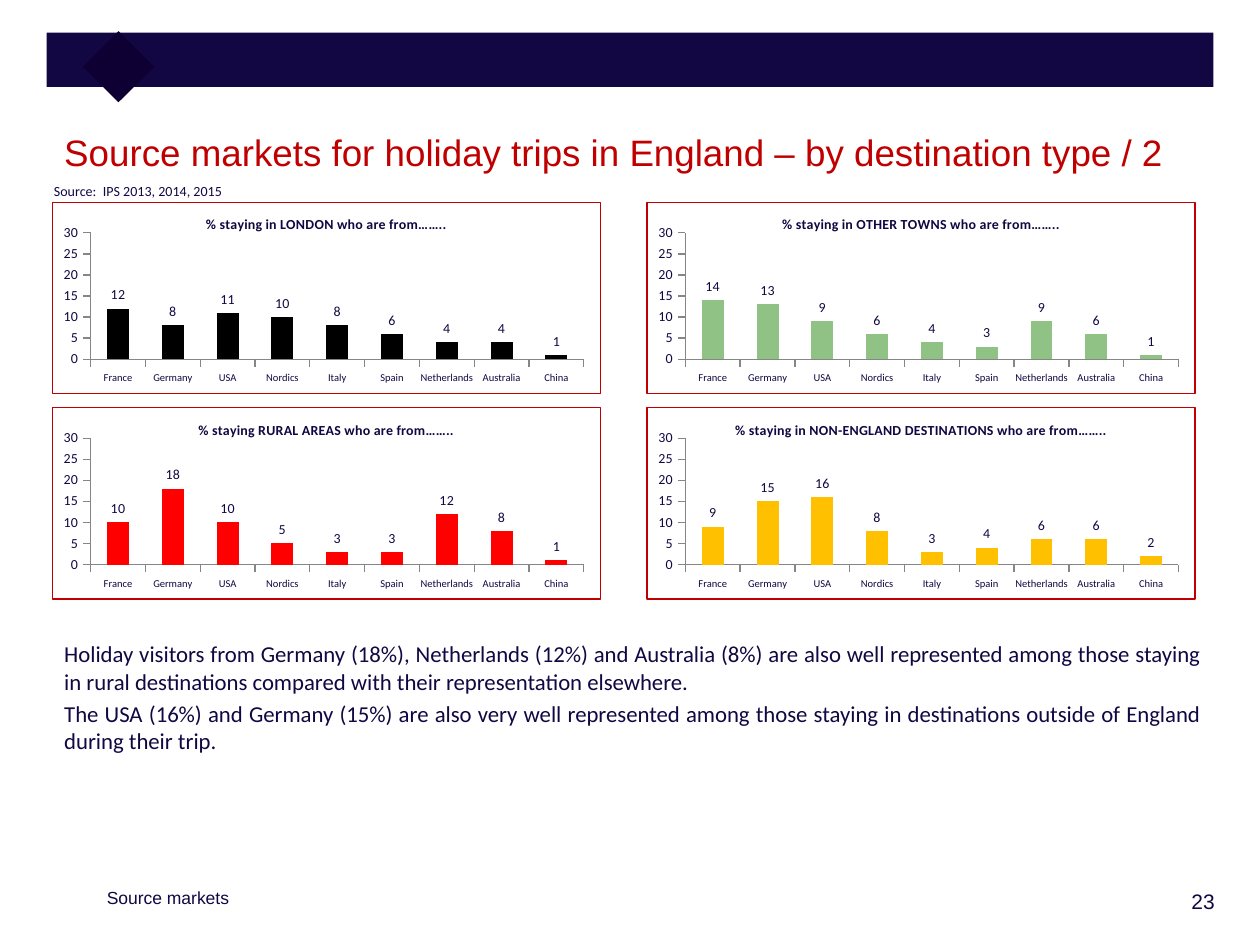
from lxml import etree
from pptx import Presentation
from pptx.chart.data import CategoryChartData
from pptx.dml.color import RGBColor
from pptx.enum import chart as charts, shapes, text
from pptx.util import Inches, Pt

NAVY, DARK_NAVY, RED, GREY = "120742", "0E0033", "C00000", "868686"

TITLE = "Source markets for holiday trips in England – by destination type / 2"
SOURCE = "Source:  IPS 2013, 2014, 2015"
SECTION = "Source markets"
PAGE = "23"
COMMENTS = [
    "Holiday visitors from Germany (18%), Netherlands (12%) and Australia (8%) are also well "
    "represented among those staying in rural destinations compared with their representation "
    "elsewhere.",
    "The USA (16%) and Germany (15%) are also very well represented among those staying in "
    "destinations outside of England during their trip.",
]
MARKETS = ["France", "Germany", "USA", "Nordics", "Italy", "Spain",
           "Netherlands", "Australia", "China"]
DESTINATIONS = [
    ("% staying in LONDON who are from……..", "000000", [12, 8, 11, 10, 8, 6, 4, 4, 1]),
    ("% staying in OTHER TOWNS who are from……..", "90C286", [14, 13, 9, 6, 4, 3, 9, 6, 1]),
    ("% staying RURAL AREAS who are from……..", "FF0000", [10, 18, 10, 5, 3, 3, 12, 8, 1]),
    ("% staying in NON-ENGLAND DESTINATIONS who are from……..", "FFC000",
     [9, 15, 16, 8, 3, 4, 6, 6, 2]),
]

CHART_LEFT, CHART_TOP, CHART_WIDTH, CHART_HEIGHT = 0.41, 1.6, 4.36, 1.53
COLUMN_STEP, ROW_STEP = 4.72, 1.63
PLOT = {"x": 0.07, "y": 0.16, "w": 0.9, "h": 0.66}
CHART_NS = "http://schemas.openxmlformats.org/drawingml/2006/chart"
DRAWING_NS = "http://schemas.openxmlformats.org/drawingml/2006/main"


def rgb(value):
    return RGBColor.from_string(value)


def style(font, size, face="Calibri", color=NAVY, bold=False):
    font.size, font.name, font.bold = Pt(size), face, bold
    font.color.rgb = rgb(color)


def place(shape, box):
    shape.left, shape.top, shape.width, shape.height = map(Inches, box)


def add_label(slide, words, box, size, face, align=text.PP_ALIGN.LEFT):
    frame = slide.shapes.add_textbox(*map(Inches, box)).text_frame
    frame.word_wrap = True
    frame.text = words
    frame.paragraphs[0].alignment = align
    style(frame.paragraphs[0].font, size, face)


def add_block(slide, box, color, rotation=0):
    block = slide.shapes.add_shape(shapes.MSO_SHAPE.RECTANGLE, *map(Inches, box))
    block.shadow.inherit = False
    block.fill.solid()
    block.fill.fore_color.rgb = rgb(color)
    block.line.fill.background()
    block.rotation = rotation


def frame_chart(chart):
    """Give the chart area a thin red border and fix its inner plot area."""
    border = etree.fromstring(
        f'<c:spPr xmlns:c="{CHART_NS}" xmlns:a="{DRAWING_NS}"><a:noFill/>'
        f'<a:ln w="{Pt(0.75)}"><a:solidFill><a:srgbClr val="{RED}"/></a:solidFill></a:ln>'
        '</c:spPr>')
    chart.font._element.getroottree().getroot().find(f"{{{CHART_NS}}}txPr").addprevious(border)
    plot_area = border.getparent().find(f".//{{{CHART_NS}}}plotArea")
    for old in plot_area.findall(f"{{{CHART_NS}}}layout"):
        plot_area.remove(old)
    edges = "".join(f'<c:{side}Mode val="edge"/>' for side in "xy")
    sizes = "".join(f'<c:{side} val="{part}"/>' for side, part in PLOT.items())
    plot_area.insert(0, etree.fromstring(
        f'<c:layout xmlns:c="{CHART_NS}"><c:manualLayout><c:layoutTarget val="inner"/>'
        f'{edges}{sizes}</c:manualLayout></c:layout>'))


def add_market_chart(slide, box, heading, color, shares):
    data = CategoryChartData(number_format="0")
    data.categories = MARKETS
    data.add_series("Series 1", shares)
    chart = slide.shapes.add_chart(
        charts.XL_CHART_TYPE.COLUMN_CLUSTERED, *map(Inches, box), data).chart
    style(chart.font, 12)
    chart.has_legend = False
    chart.has_title = True
    chart.chart_title.text_frame.text = heading
    style(chart.chart_title.text_frame.paragraphs[0].font, 8, bold=True)
    chart.chart_title.include_in_layout = False

    for axis, size in ((chart.category_axis, 6), (chart.value_axis, 8)):
        style(axis.tick_labels.font, size)
        axis.has_major_gridlines = False
        axis.major_tick_mark = charts.XL_TICK_MARK.OUTSIDE
        axis.format.line.color.rgb = rgb(GREY)
    scale = chart.value_axis
    scale.minimum_scale, scale.maximum_scale, scale.major_unit = 0, 30, 5

    plot = chart.plots[0]
    plot.gap_width = 150
    plot.vary_by_categories = False
    bars = plot.series[0]
    bars.format.fill.solid()
    bars.format.fill.fore_color.rgb = rgb(color)
    labels = bars.data_labels
    labels.show_value = True
    labels.number_format, labels.number_format_is_linked = "0", False
    labels.position = charts.XL_LABEL_POSITION.OUTSIDE_END
    style(labels.font, 8)
    frame_chart(chart)


def main():
    deck = Presentation()
    deck.slide_width, deck.slide_height = Inches(10), Inches(7.5)
    slide = deck.slides.add_slide(deck.slide_layouts[1])
    title, body = slide.placeholders

    add_block(slide, (0.37, 0.26, 9.26, 0.43), NAVY)
    add_block(slide, (0.74, 0.33, 0.4, 0.4), DARK_NAVY, 45)

    place(title, (0.41, 0.95, 9.59, 0.61))
    heading = title.text_frame
    heading.text = TITLE
    heading.auto_size = text.MSO_AUTO_SIZE.NONE
    heading.vertical_anchor = text.MSO_ANCHOR.MIDDLE
    heading.margin_bottom = Inches(0.15)
    heading.paragraphs[0].alignment = text.PP_ALIGN.LEFT
    style(heading.paragraphs[0].font, 21, "Arial", RED)

    place(body, (0.41, 5.03, 9.21, 2.28))
    body.text_frame.text = "\n".join(COMMENTS)
    body.text_frame.auto_size = text.MSO_AUTO_SIZE.NONE
    for number, paragraph in enumerate(body.text_frame.paragraphs):
        properties = paragraph._p.get_or_add_pPr()
        properties.set("marL", "0")
        properties.set("indent", "0")
        etree.SubElement(properties, f"{{{DRAWING_NS}}}buNone")
        paragraph.alignment = text.PP_ALIGN.JUSTIFY
        paragraph.space_before = Pt(2.6 if number else 0)
        style(paragraph.font, 13)

    add_label(slide, SOURCE, (0.33, 1.4, 1.8, 0.18), 8, "Calibri")
    add_label(slide, SECTION, (0.75, 6.99, 2.67, 0.3), 10, "Arial")
    add_label(slide, PAGE, (8.53, 7, 1.21, 0.36), 12, "Arial", text.PP_ALIGN.RIGHT)

    for number, destination in enumerate(DESTINATIONS):
        row, column = divmod(number, 2)
        box = (CHART_LEFT + column * COLUMN_STEP, CHART_TOP + row * ROW_STEP,
               CHART_WIDTH, CHART_HEIGHT)
        add_market_chart(slide, box, *destination)

    deck.save("out.pptx")


if __name__ == "__main__":
    main()
